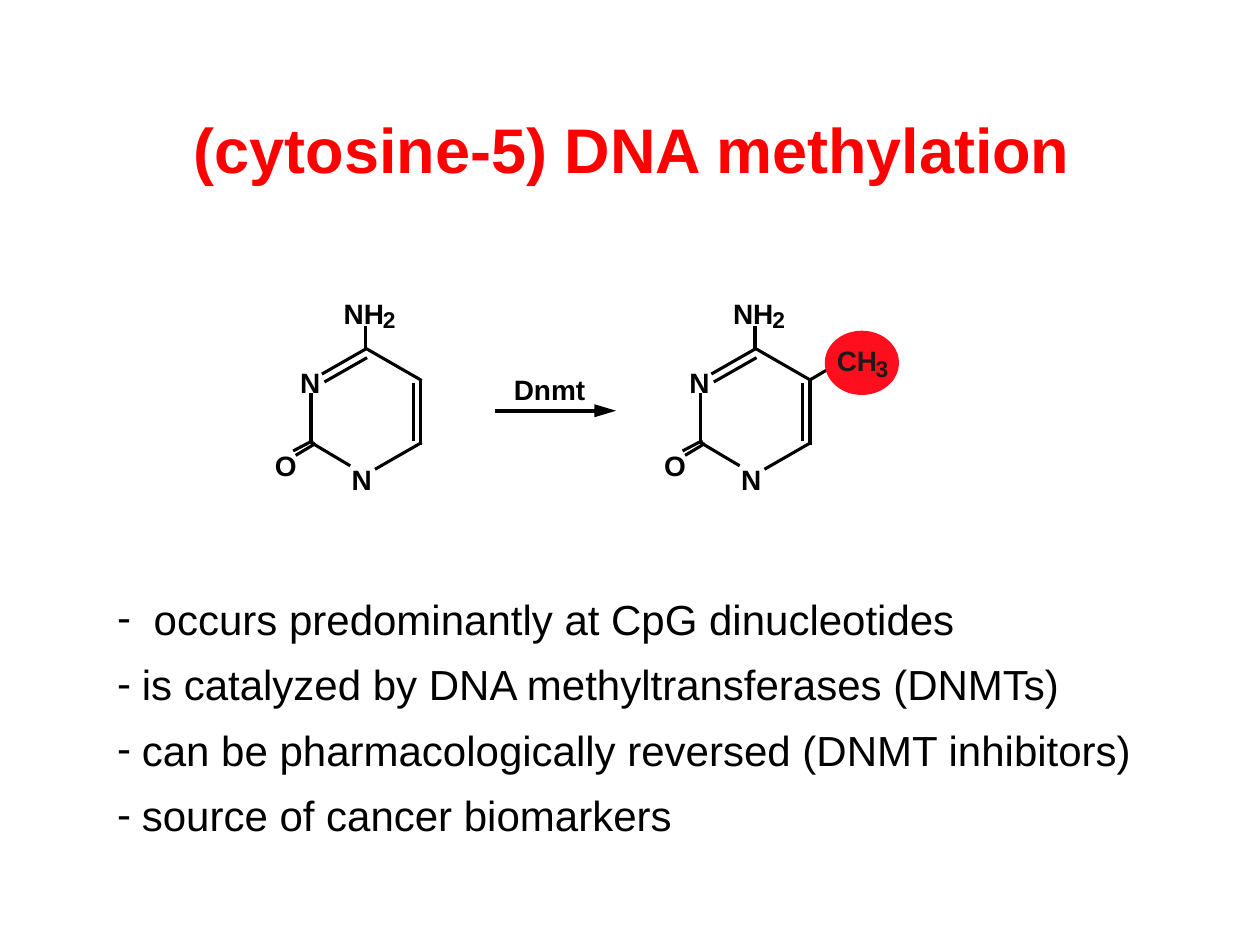
from pptx import Presentation
from pptx.dml.color import RGBColor
from pptx.enum.shapes import MSO_CONNECTOR, MSO_SHAPE
from pptx.enum.text import MSO_ANCHOR, MSO_AUTO_SIZE, PP_ALIGN
from pptx.oxml.ns import qn
from pptx.util import Cm, Pt
from lxml.etree import SubElement


def write(par, text, size, color, bold=True):
    run = par.add_run()
    run.text = text
    font = run.font
    font.name, font.size, font.bold = "Arial", Pt(size), bold
    font.color.rgb = RGBColor.from_string(color)


def draw(x1, y1, x2, y2, width=1.75):
    line = slide.shapes.add_connector(
        MSO_CONNECTOR.STRAIGHT, Cm(x1), Cm(y1), Cm(x2), Cm(y2))
    line.line.width = Pt(width)
    line.line.color.rgb = RGBColor.from_string("000000")
    SubElement(line._element.spPr, qn("a:effectLst"))
    return line


prs = Presentation()
prs.slide_width, prs.slide_height = Cm(25.4), Cm(19.05)
slide = prs.slides.add_slide(prs.slide_layouts[5])

title = slide.shapes.title
title.left, title.top, title.width, title.height = Cm(0.89), Cm(1.52), Cm(23.7), Cm(2.92)
title.text_frame.vertical_anchor = MSO_ANCHOR.MIDDLE
head = title.text_frame.paragraphs[0]
head.alignment = PP_ALIGN.CENTER
write(head, "(cytosine-5) DNA methylation", 36, "FF0000")

bonds = [
    (6.27, 7.92, 6.27, 8.94),
    (6.27, 8.92, 7.06, 9.39),
    (7.4, 7.02, 6.49, 7.54),
    (7.37, 7.02, 8.5, 7.67),
    (8.48, 7.65, 8.48, 8.97),
    (8.5, 8.92, 7.56, 9.46),
    (8.33, 7.72, 8.33, 8.89),
    (7.4, 7.21, 6.54, 7.7),
    (7.37, 6.58, 7.37, 7.04),
    (6.31, 8.88, 5.91, 9.09),
    (6.36, 8.94, 5.96, 9.18),
]
atoms = [
    ("NH", 6.93, 5.97, 0.9, 16),
    ("2", 7.72, 6.17, 0.3, 13),
    ("O", 5.54, 9.04, 0.5, 16),
    ("N", 6.05, 7.37, 0.45, 16),
    ("N", 7.09, 9.32, 0.45, 16),
]
shift = 7.85
labels = []
for dx in (0, shift):
    for x1, y1, x2, y2 in bonds:
        draw(x1 + dx, y1, x2 + dx, y2)
    for text, x, y, w, size in atoms:
        labels.append((text, x + dx, y, w, size, "000000"))
draw(16.31, 7.67, 16.73, 7.42)

arrow = draw(9.98, 8.28, 12.42, 8.28, 2.5)
SubElement(arrow.line._get_or_add_ln(), qn("a:tailEnd"), type="triangle", w="med", len="lg")

spot = slide.shapes.add_shape(MSO_SHAPE.OVAL, Cm(16.64), Cm(6.68), Cm(1.47), Cm(1.27))
spot.shadow.inherit = False
spot.fill.solid()
spot.fill.fore_color.rgb = RGBColor.from_string("FF0F1E")
spot.line.color.rgb = RGBColor.from_string("FF0F1E")
spot.line.width = Pt(0.75)

labels += [
    ("Dnmt", 10.36, 7.52, 1.55, 16, "000000"),
    ("CH", 16.87, 6.93, 0.9, 16, "1F1A17"),
    ("3", 17.65, 7.16, 0.3, 13, "1F1A17"),
]
for text, x, y, w, size, color in labels:
    box = slide.shapes.add_textbox(Cm(x), Cm(y), Cm(w), Cm(size * 0.043))
    frame = box.text_frame
    frame.margin_left = frame.margin_right = frame.margin_top = frame.margin_bottom = 0
    frame.word_wrap = False
    frame.auto_size = MSO_AUTO_SIZE.SHAPE_TO_FIT_TEXT
    write(frame.paragraphs[0], text, size, color)

facts = [
    ("occurs predominantly at CpG dinucleotides", 0.74),
    ("is catalyzed by DNA methyltransferases (DNMTs)", 0.5),
    ("can be pharmacologically reversed (DNMT inhibitors)", 0.5),
    ("source of cancer biomarkers", 0.5),
]
frame = slide.shapes.add_textbox(Cm(2.11), Cm(11.53), Cm(21.23), Cm(5.54)).text_frame
frame.word_wrap = True
for i, (text, gap) in enumerate(facts):
    par = frame.add_paragraph() if i else frame.paragraphs[0]
    par.line_spacing = 1.3
    props = par._p.get_or_add_pPr()
    props.set("marL", str(Cm(gap)))
    props.set("indent", str(-Cm(gap)))
    SubElement(props, qn("a:buFont"), typeface="Arial")
    SubElement(props, qn("a:buChar"), char="-")
    write(par, text, 24, "000000", False)

prs.save("out.pptx")
